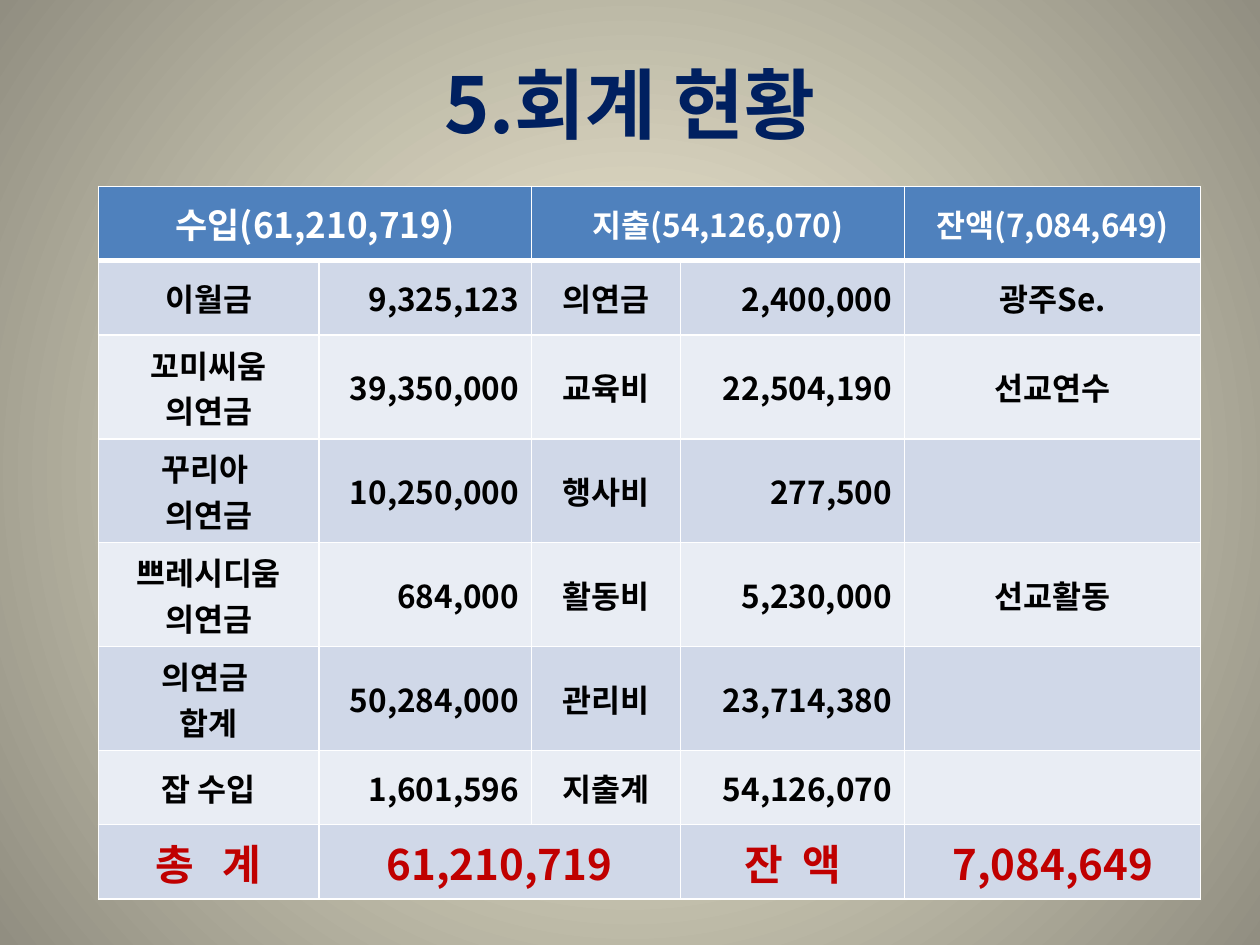
from lxml import etree
from pptx import Presentation
from pptx.dml.color import RGBColor
from pptx.enum.text import MSO_ANCHOR, PP_ALIGN
from pptx.oxml import parse_xml
from pptx.oxml.ns import nsdecls, qn
from pptx.util import Inches, Pt

CENTER, RIGHT = PP_ALIGN.CENTER, PP_ALIGN.RIGHT
MIDDLE = MSO_ANCHOR.MIDDLE
FONT = "Noto Sans CJK KR"
COLORS = {
    "glow": "FCF7DD",
    "edge": "918E81",
    "title": "002060",
    "header": "4F81BD",
    "odd": "D0D8E8",
    "even": "E9EDF4",
    "white": "FFFFFF",
    "text": "000000",
    "total": "C00000",
}
COLUMN_WIDTHS = [1.75, 1.69, 1.18, 1.78, 2.35]
ROW_HEIGHT = 0.59
AMOUNT_COLUMNS = (1, 3)
ROWS = [
    ["수입(61,210,719)", "", "지출(54,126,070)", "", "잔액(7,084,649)"],
    ["이월금", "9,325,123", "의연금", "2,400,000", "광주Se."],
    ["꼬미씨움\n의연금", "39,350,000", "교육비", "22,504,190", "선교연수"],
    ["꾸리아 \n의연금", "10,250,000", "행사비", "277,500", ""],
    ["쁘레시디움\n의연금", "684,000", "활동비", "5,230,000", "선교활동"],
    ["의연금 \n합계", "50,284,000", "관리비", "23,714,380", ""],
    ["잡 수입", "1,601,596", "지출계", "54,126,070", ""],
    ["총   계", "61,210,719", "", "잔  액", "7,084,649"],
]
MERGES = [(0, 0), (0, 2), (7, 1)]
LAST_ROW = len(ROWS) - 1


def write_text(frame, text, size=18, color="text", align=CENTER):
    frame.text = text
    for paragraph in frame.paragraphs:
        paragraph.alignment = align
        for item in paragraph.runs or [paragraph]:
            item.font.name = FONT
            item.font.size = Pt(size)
            item.font.bold = True
            item.font.color.rgb = RGBColor.from_string(COLORS[color])
        for run in paragraph.runs:
            latin = run.font._element.find(qn("a:latin"))
            east_asian = etree.Element(qn("a:ea"), typeface=FONT)
            latin.addnext(east_asian)


class SlideBuilder:
    def __init__(self, presentation):
        self.slide = presentation.slides.add_slide(presentation.slide_layouts[5])

    def background(self):
        stops = "".join(
            f'<a:gs pos="{position}"><a:srgbClr val="{COLORS[name]}"/></a:gs>'
            for position, name in ((0, "glow"), (100000, "edge"))
        )
        background = parse_xml(
            f'<p:bg {nsdecls("p", "a")}><p:bgPr><a:gradFill rotWithShape="1">'
            f'<a:gsLst>{stops}</a:gsLst><a:path path="circle">'
            '<a:fillToRect l="50000" t="50000" r="50000" b="50000"/></a:path>'
            "</a:gradFill><a:effectLst/></p:bgPr></p:bg>"
        )
        self.slide._element.cSld.insert(0, background)

    def title(self, text, left, top, width, height):
        title = self.slide.shapes.title
        title.left, title.top = Inches(left), Inches(top)
        title.width, title.height = Inches(width), Inches(height)
        title.text_frame.vertical_anchor = MIDDLE
        write_text(title.text_frame, text, size=44, color="title")

    def borders(self, cell, top, bottom):
        properties = cell._tc.get_or_add_tcPr()
        for side, width in (("L", 1), ("R", 1), ("T", top), ("B", bottom)):
            properties.append(parse_xml(
                f'<a:ln{side} {nsdecls("a")} w="{Pt(width)}"><a:solidFill>'
                f'<a:srgbClr val="{COLORS["white"]}"/></a:solidFill></a:ln{side}>'
            ))

    def cell(self, cell, text, row, column):
        self.borders(cell, top=3 if row == 1 else 1, bottom=3 if row == 0 else 1)
        fill = "header" if row == 0 else "odd" if row % 2 else "even"
        cell.fill.solid()
        cell.fill.fore_color.rgb = RGBColor.from_string(COLORS[fill])
        cell.vertical_anchor = MIDDLE
        if row == 0:
            style = {"size": 18 if column else 20, "color": "white"}
        elif row == LAST_ROW:
            style = {"size": 24, "color": "total"}
        else:
            style = {"align": RIGHT if column in AMOUNT_COLUMNS else CENTER}
        write_text(cell.text_frame, text, **style)

    def table(self, left, top, width, height):
        frame = self.slide.shapes.add_table(
            len(ROWS), len(COLUMN_WIDTHS),
            Inches(left), Inches(top), Inches(width), Inches(height),
        )
        table = frame.table
        for column, column_width in zip(table.columns, COLUMN_WIDTHS):
            column.width = Inches(column_width)
        for row in table.rows:
            row.height = Inches(ROW_HEIGHT)
        for row, texts in enumerate(ROWS):
            for column, text in enumerate(texts):
                self.cell(table.cell(row, column), text, row, column)
        for row, column in MERGES:
            table.cell(row, column).merge(table.cell(row, column + 1))
        frame.height = Inches(height)


def main():
    presentation = Presentation()
    presentation.slide_width, presentation.slide_height = Inches(10), Inches(7.5)
    builder = SlideBuilder(presentation)
    builder.background()
    builder.title("5.회계 현황", 0.5, 0.3, 9, 1.03)
    builder.table(0.78, 1.48, 8.75, 5.16)
    presentation.save("out.pptx")


if __name__ == "__main__":
    main()
